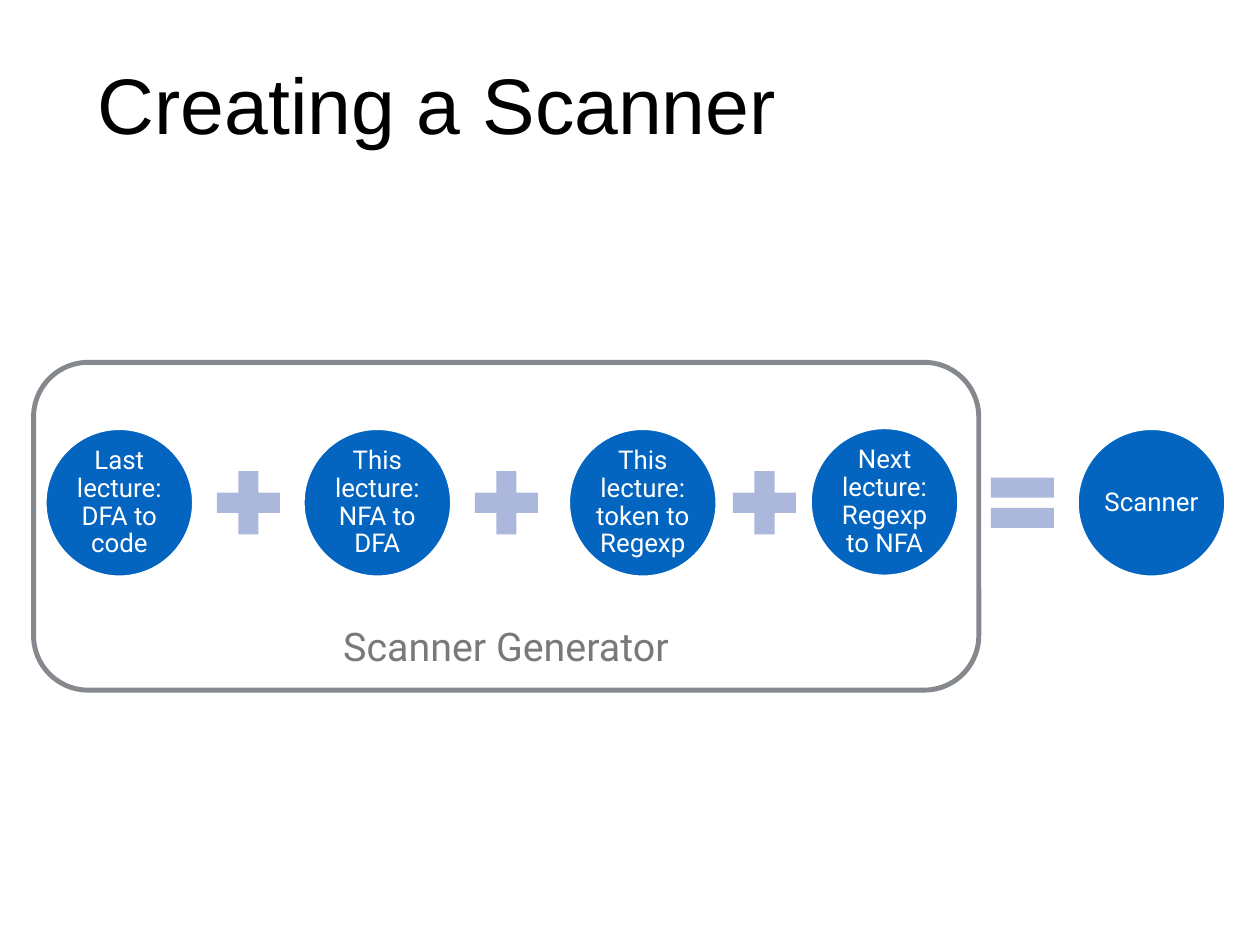
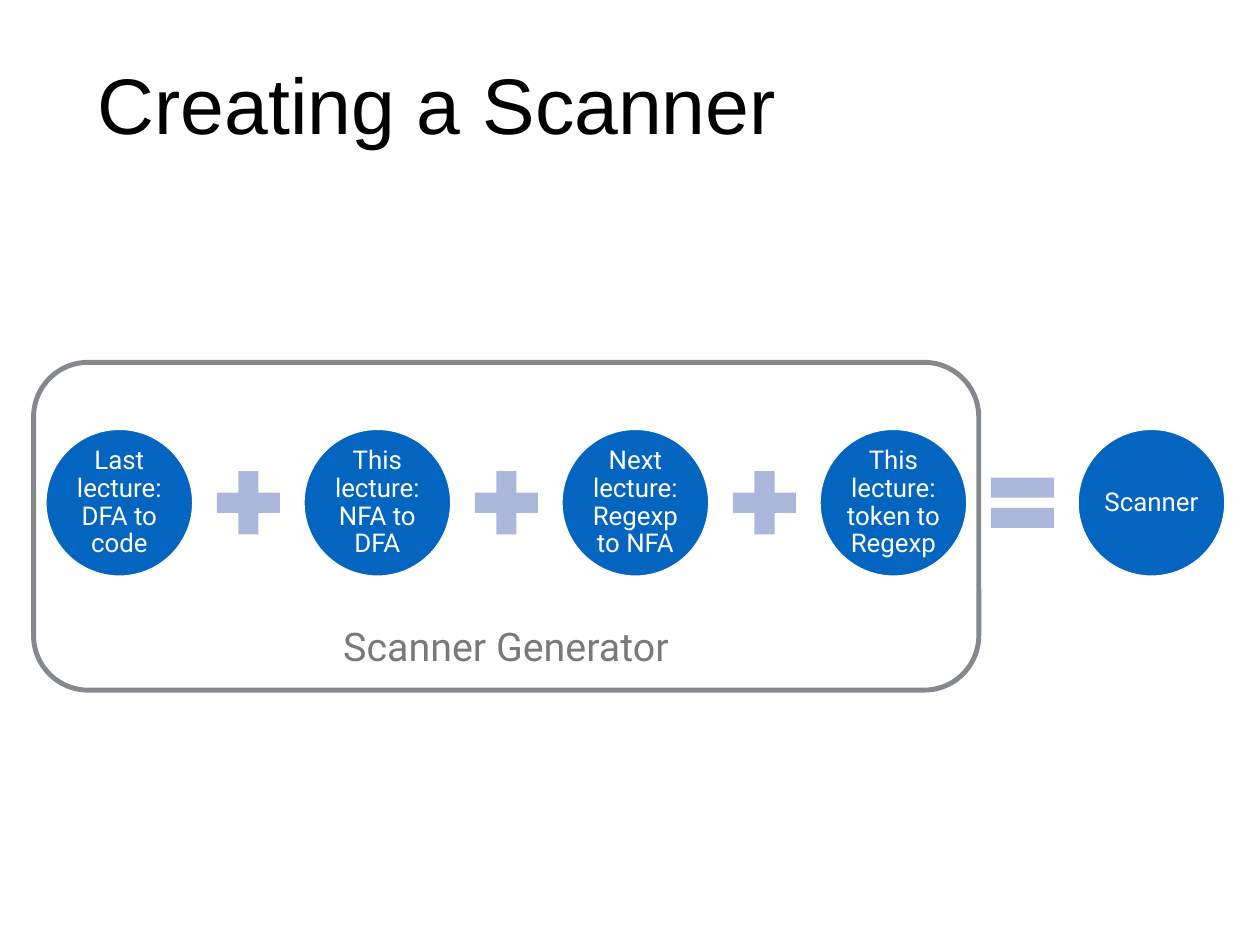
from dataclasses import dataclass

from pptx import Presentation
from pptx.dml.color import RGBColor
from pptx.enum import shapes, text
from pptx.util import Pt


@dataclass(frozen=True)
class Theme:
    black: RGBColor = RGBColor.from_string("000000")
    white: RGBColor = RGBColor.from_string("FFFFFF")
    blue: RGBColor = RGBColor.from_string("0365C0")
    sign: RGBColor = RGBColor.from_string("ABB8DC")
    frame: RGBColor = RGBColor.from_string("85888D")
    label: RGBColor = RGBColor.from_string("797979")
    title_font: str = "Arial"
    body_font: str = "Roboto"
    title_size: int = 64
    label_size: int = 32
    step_size: int = 21


THEME = Theme()
PLUS = shapes.MSO_SHAPE.MATH_PLUS
EQUAL = shapes.MSO_SHAPE.MATH_EQUAL

# Boxes: left, top, width, height
TITLE_BOX = (75, -1.5, 874, 170)
EQUATION_BOX = (36.9, 348.5, 959, 120.2)
FRAME_BOX = (27.3, 294.5, 768.2, 266.4)
SIGN_SIZE = 69.7

DFA_TO_CODE = "Last lecture: DFA to code"
NFA_TO_DFA = "This lecture: NFA to DFA"
REGEXP_TO_NFA = "Next lecture: Regexp to NFA"
TOKEN_TO_REGEXP = "This lecture: token to Regexp"
RESULT = "Scanner"

# Each slide: steps in order, and how far some circles sit off the grid (dx, dy)
SLIDES = [
    ([DFA_TO_CODE, NFA_TO_DFA, TOKEN_TO_REGEXP, REGEXP_TO_NFA],
     {2: (6, 0), 3: (-7.2, -0.7)}),
    ([DFA_TO_CODE, NFA_TO_DFA, REGEXP_TO_NFA, TOKEN_TO_REGEXP], {}),
]


def write(shape, words, font, size, color, inset,
          anchor=text.MSO_ANCHOR.MIDDLE, align=text.PP_ALIGN.CENTER):
    """Put one styled paragraph into a shape."""
    frame = shape.text_frame
    frame.word_wrap = True
    frame.vertical_anchor = anchor
    frame.margin_left = frame.margin_right = Pt(inset)
    frame.margin_top = frame.margin_bottom = Pt(inset)
    paragraph = frame.paragraphs[0]
    paragraph.text = words
    paragraph.alignment = align
    paragraph.font.name = font
    paragraph.font.size = Pt(size)
    paragraph.font.color.rgb = color
    return paragraph


def add_preset(parent, preset, box, fill=None, line=None, width=0):
    """Add a flat preset shape; no colour means no fill or no line."""
    shape = parent.add_shape(preset, *map(Pt, box))
    shape.shadow.inherit = False
    if fill is None:
        shape.fill.background()
    else:
        shape.fill.solid()
        shape.fill.fore_color.rgb = fill
    if line is None:
        shape.line.fill.background()
    else:
        shape.line.color.rgb = line
        shape.line.width = Pt(width)
    return shape


def add_title(slide, box, words):
    title = slide.shapes.add_textbox(*map(Pt, box))
    write(title, words, THEME.title_font, THEME.title_size, THEME.black, 4.3,
          align=text.PP_ALIGN.LEFT)


def add_equation(slide, box, steps, nudges):
    """Circles on an even pitch, a sign centred in every gap of the grid."""
    left, top, width, diameter = box
    terms = steps + [RESULT]
    pitch = (width - diameter) / (len(terms) - 1)
    sign_offset = (pitch + diameter - SIGN_SIZE) / 2
    sign_top = top + (diameter - SIGN_SIZE) / 2
    parts = slide.shapes.add_group_shape().shapes

    for i, words in enumerate(terms):
        x = left + i * pitch
        dx, dy = nudges.get(i, (0, 0))
        circle = add_preset(parts, shapes.MSO_SHAPE.OVAL,
                            (x + dx, top + dy, diameter, diameter),
                            THEME.blue, THEME.white, 2)
        write(circle, words, THEME.body_font, THEME.step_size, THEME.white,
              2).line_spacing = 0.9
        if i < len(steps):
            sign = EQUAL if i == len(steps) - 1 else PLUS
            add_preset(parts, sign,
                       (x + sign_offset, sign_top, SIGN_SIZE, SIGN_SIZE),
                       THEME.sign)


def add_generator_frame(slide, box, words):
    frame = add_preset(slide.shapes, shapes.MSO_SHAPE.ROUNDED_RECTANGLE, box,
                       line=THEME.frame, width=4)
    write(frame, words, THEME.body_font, THEME.label_size, THEME.label, 4,
          anchor=text.MSO_ANCHOR.BOTTOM)


def main():
    deck = Presentation()
    deck.slide_width, deck.slide_height = Pt(1024), Pt(768)
    for steps, nudges in SLIDES:
        slide = deck.slides.add_slide(deck.slide_layouts[6])
        add_title(slide, TITLE_BOX, "Creating a Scanner")
        add_equation(slide, EQUATION_BOX, steps, nudges)
        add_generator_frame(slide, FRAME_BOX, "Scanner Generator")
    deck.save("out.pptx")


if __name__ == "__main__":
    main()
